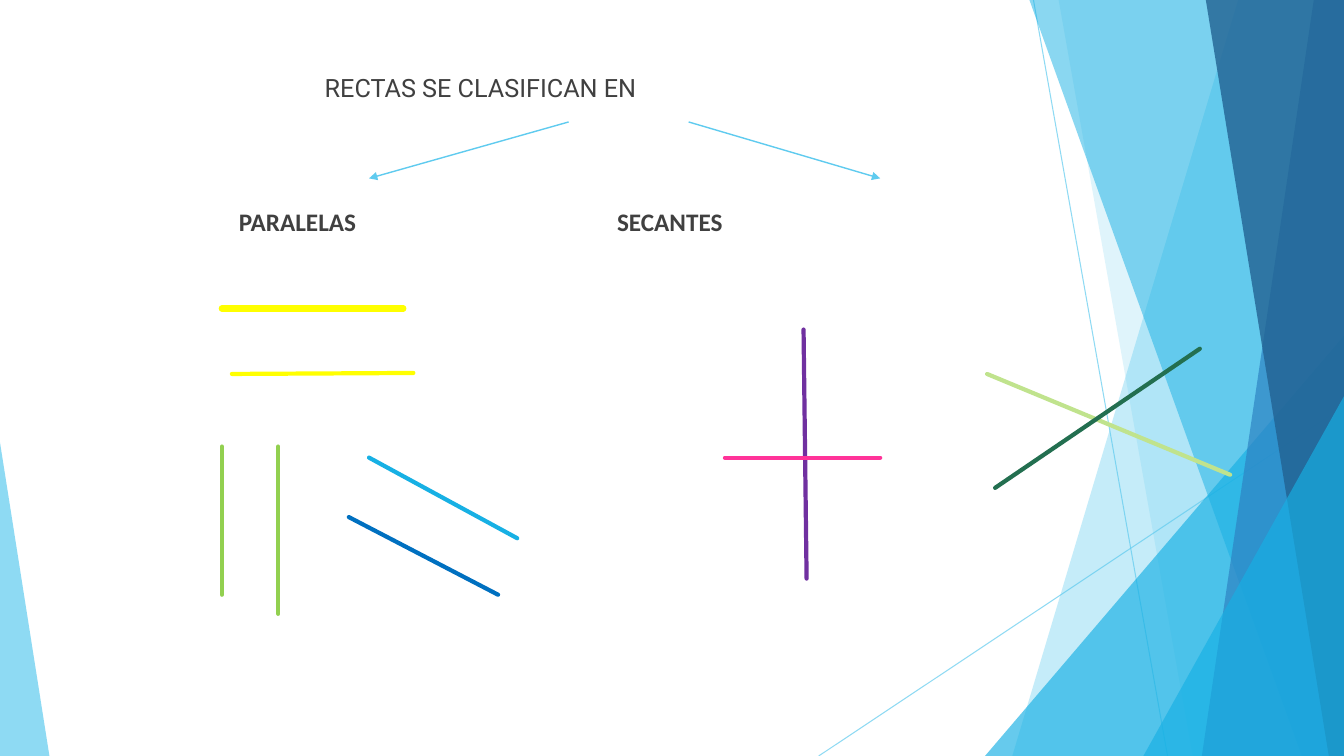
from dataclasses import dataclass

from lxml import etree
from pptx import Presentation
from pptx.dml.color import RGBColor
from pptx.enum import shapes as shp, text as txt
from pptx.oxml import ns
from pptx.util import Inches, Pt

WIDTH, HEIGHT = 13.33, 7.5
COLORS = {
    "text": "404040", "sky": "5FCBEF", "cyan": "17B0E4", "blue": "2E83C3",
    "navy": "226292", "yellow": "FFFF00", "green": "92D050", "royal": "0070C0",
    "purple": "7030A0", "pink": "FF3399", "lime": "C0E38D", "forest": "236F50",
}


@dataclass
class Line:
    start: tuple[float, float]
    end: tuple[float, float]
    color: str
    weight: float = 3
    opacity: int = 100
    arrow: bool = False
    cap: str = "rnd"


@dataclass
class Band:
    """Band that reaches the right edge, with a slanted left side."""
    top_x: float
    bottom_x: float
    color: str
    opacity: int


@dataclass
class Corner:
    """Triangle standing on the bottom edge; apex is 0 (left) or 1 (right)."""
    left: float
    top: float
    width: float
    apex: int
    color: str
    opacity: int


@dataclass
class Label:
    """Wording for one placeholder of the layout."""
    holder: int
    wording: str
    left: float
    top: float
    width: float
    font: str
    bold: bool


LABELS = [
    Label(0, "RECTAS SE CLASIFICAN EN", 3.22, 0.67, 4, "Roboto", False),
    Label(1, "PARALELAS", 2.37, 2, 2, "Calibri", True),
    Label(2, "SECANTES", 6.12, 2, 2, "Calibri", True),
]
BACKDROP = [
    Line((10.25, 0), (11.58, HEIGHT), "sky", 0.75, 70, cap="flat"),
    Line((WIDTH, 4.03), (8.12, HEIGHT), "sky", 0.75, 70, cap="flat"),
    Band(12.28, 10.04, "sky", 36),
    Band(10.5, 11.83, "sky", 20),
    Corner(9.77, 3.33, 3.56, 1, "cyan", 66),
    Band(10.21, 12.91, "cyan", 50),
    Band(13.03, 11.92, "blue", 70),
    Band(11.96, 13.18, "navy", 80),
    Corner(11.34, 3.93, 1.99, 1, "cyan", 66),
    Corner(0, 4.39, 0.49, 0, "sky", 70),
]
PARALLEL_LINES = [
    Line((2.2, 3.06), (4, 3.06), "yellow", 4.5),
    Line((2.3, 3.71), (4.1, 3.7), "yellow"),
    Line((2.2, 4.43), (2.2, 5.9), "green"),
    Line((2.76, 4.43), (2.76, 6.09), "green"),
    Line((3.66, 4.54), (5.13, 5.34), "cyan"),
    Line((3.46, 5.13), (4.94, 5.9), "royal"),
]
SECANT_LINES = [
    Line((7.97, 3.27), (8, 5.74), "purple"),
    Line((7.19, 4.54), (8.73, 4.54), "pink"),
    Line((9.79, 3.71), (12.2, 4.71), "lime"),
    Line((11.9, 3.46), (9.87, 4.84), "forest"),
]
BRANCHES = [
    Line((5.64, 1.21), (3.66, 1.77), "sky", 1, arrow=True, cap="flat"),
    Line((6.83, 1.21), (8.73, 1.77), "sky", 1, arrow=True, cap="flat"),
]


def rgb(name: str) -> RGBColor:
    return RGBColor.from_string(COLORS[name])


def add_child(parent, tag: str, **attributes: str) -> None:
    etree.SubElement(parent, ns.qn(tag), attributes)


def set_opacity(element, opacity: int) -> None:
    for color in element.iter(ns.qn("a:srgbClr")):
        add_child(color, "a:alpha", val=str(opacity * 1000))


def draw_line(slide, line: Line) -> None:
    stroke = slide.shapes.add_connector(
        shp.MSO_CONNECTOR.STRAIGHT, *map(Inches, line.start + line.end))
    stroke.line.color.rgb = rgb(line.color)
    stroke.line.width = Pt(line.weight)
    properties = stroke._element.spPr
    outline = properties.find(ns.qn("a:ln"))
    outline.set("cap", line.cap)
    if line.opacity < 100:
        set_opacity(outline, line.opacity)
    if line.arrow:
        add_child(outline, "a:tailEnd", type="triangle")
    add_child(properties, "a:effectLst")


def paint(facet, color: str, opacity: int) -> None:
    facet.shadow.inherit = False
    facet.fill.solid()
    facet.fill.fore_color.rgb = rgb(color)
    set_opacity(facet._element.spPr, opacity)
    facet.line.fill.background()


def draw_band(slide, band: Band) -> None:
    outline = slide.shapes.build_freeform(Inches(band.top_x), 0)
    rest = [(WIDTH, 0), (WIDTH, HEIGHT), (band.bottom_x, HEIGHT)]
    outline.add_line_segments([(Inches(x), Inches(y)) for x, y in rest], close=True)
    paint(outline.convert_to_shape(), band.color, band.opacity)


def draw_corner(slide, corner: Corner) -> None:
    triangle = slide.shapes.add_shape(
        shp.MSO_SHAPE.ISOSCELES_TRIANGLE, Inches(corner.left), Inches(corner.top),
        Inches(corner.width), Inches(HEIGHT - corner.top))
    triangle.adjustments[0] = corner.apex
    paint(triangle, corner.color, corner.opacity)


def write_label(slide, label: Label) -> None:
    holder = slide.placeholders[label.holder]
    holder.left, holder.top = Inches(label.left), Inches(label.top)
    holder.width, holder.height = Inches(label.width), Inches(0.4)
    frame = holder.text_frame
    frame.margin_left = frame.margin_right = 0
    frame.margin_top = frame.margin_bottom = 0
    frame.vertical_anchor = txt.MSO_ANCHOR.MIDDLE
    frame.auto_size = txt.MSO_AUTO_SIZE.NONE
    frame.word_wrap = True

    paragraph = frame.paragraphs[0]
    paragraph.alignment = txt.PP_ALIGN.LEFT
    paragraph.space_before = Pt(0)
    settings = paragraph._p.get_or_add_pPr()
    settings.set("marL", "0")
    settings.set("indent", "0")
    add_child(settings, "a:buNone")

    run = paragraph.add_run()
    run.text = label.wording
    run.font.name, run.font.size, run.font.bold = label.font, Pt(18), label.bold
    run.font.color.rgb = rgb("text")


def main() -> None:
    deck = Presentation()
    deck.slide_width, deck.slide_height = Inches(WIDTH), Inches(HEIGHT)
    # Layout with a title and two bodies
    slide = deck.slides.add_slide(deck.slide_layouts[3])

    # Faceted backdrop
    draw = {Line: draw_line, Band: draw_band, Corner: draw_corner}
    for part in BACKDROP:
        draw[type(part)](slide, part)

    # Heading and the two classes
    for label in LABELS:
        write_label(slide, label)

    # Example lines and the arrows to each class
    for line in PARALLEL_LINES + SECANT_LINES + BRANCHES:
        draw_line(slide, line)

    deck.save("out.pptx")


if __name__ == "__main__":
    main()
